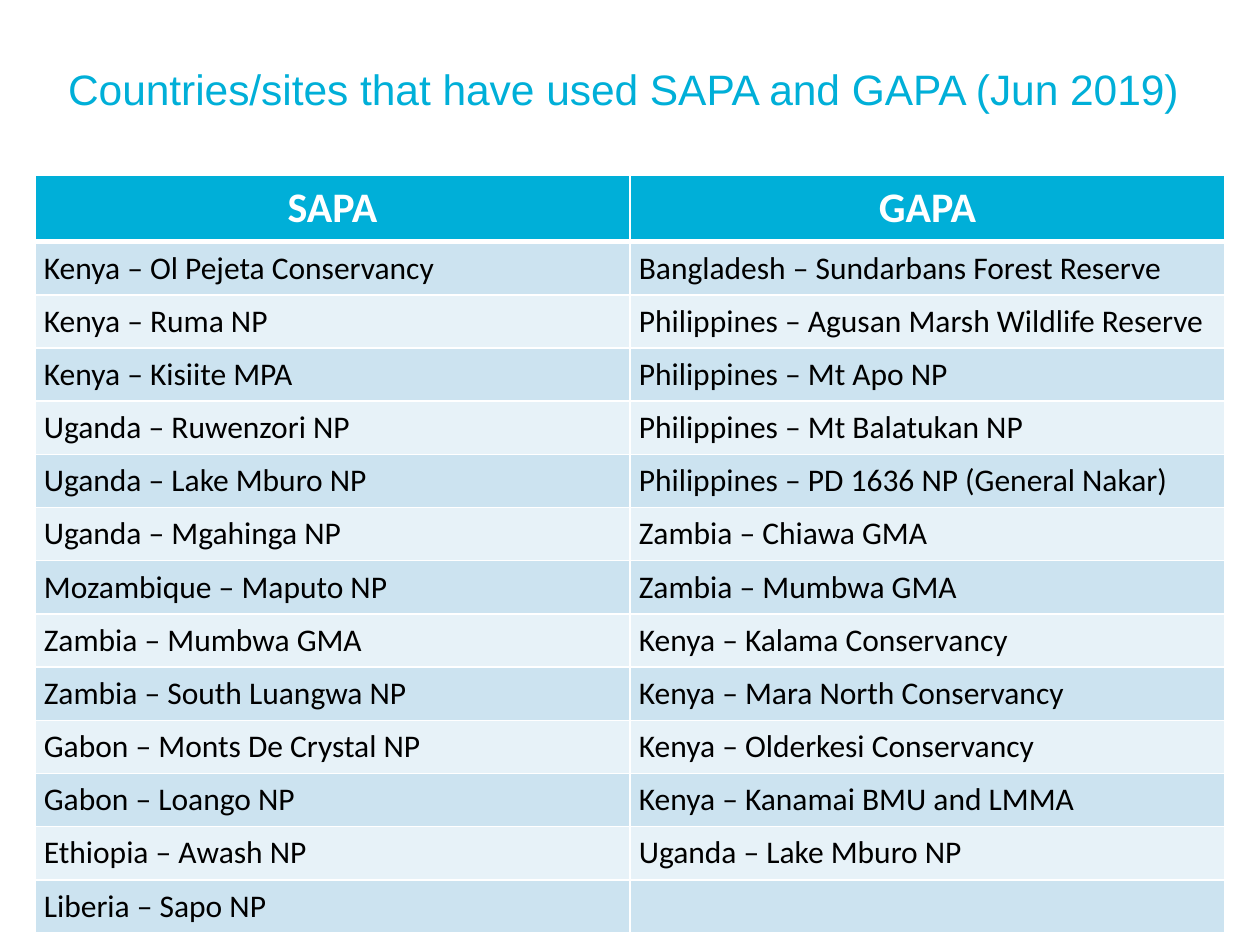
from itertools import zip_longest

from lxml import etree
from pptx import Presentation
from pptx.dml.color import RGBColor
from pptx.enum.text import MSO_ANCHOR, PP_ALIGN
from pptx.oxml.ns import qn
from pptx.util import Pt

ACCENT = "00AFD8"
WHITE = "FFFFFF"
BLACK = "000000"
BANDS = ("CCE3F0", "E7F2F8")

SAPA_SITES = [
    "Kenya – Ol Pejeta Conservancy",
    "Kenya – Ruma NP",
    "Kenya – Kisiite MPA",
    "Uganda – Ruwenzori NP",
    "Uganda – Lake Mburo NP",
    "Uganda – Mgahinga NP",
    "Mozambique – Maputo NP",
    "Zambia – Mumbwa GMA",
    "Zambia – South Luangwa NP",
    "Gabon – Monts De Crystal NP",
    "Gabon – Loango NP",
    "Ethiopia – Awash NP",
    "Liberia – Sapo NP",
]
GAPA_SITES = [
    "Bangladesh – Sundarbans Forest Reserve",
    "Philippines – Agusan Marsh Wildlife Reserve",
    "Philippines – Mt Apo NP",
    "Philippines – Mt Balatukan NP",
    "Philippines – PD 1636 NP (General Nakar)",
    "Zambia – Chiawa GMA",
    "Zambia – Mumbwa GMA",
    "Kenya – Kalama Conservancy",
    "Kenya – Mara North Conservancy",
    "Kenya – Olderkesi Conservancy",
    "Kenya – Kanamai BMU and LMMA",
    "Uganda – Lake Mburo NP",
]


def color(value):
    return RGBColor.from_string(value)


def set_font(font, name, size, value, bold=False):
    font.name = name
    font.size = Pt(size)
    font.bold = bold
    font.color.rgb = color(value)


def add_title(slide, text, left, top, width, height):
    title = slide.shapes.title
    title.left, title.top = Pt(left), Pt(top)
    title.width, title.height = Pt(width), Pt(height)
    frame = title.text_frame
    frame.text = text
    frame.vertical_anchor = MSO_ANCHOR.MIDDLE
    paragraph = frame.paragraphs[0]
    paragraph.alignment = PP_ALIGN.LEFT
    set_font(paragraph.runs[0].font, "Arial", 24.3, ACCENT)


def set_borders(cell, bottom_width):
    """Draw white cell borders; the lines must precede the cell fill."""
    properties = cell._tc.get_or_add_tcPr()
    for side, width in (("L", 1), ("R", 1), ("T", 1), ("B", bottom_width)):
        line = etree.SubElement(properties, qn(f"a:ln{side}"), w=str(Pt(width)))
        fill = etree.SubElement(line, qn("a:solidFill"))
        etree.SubElement(fill, qn("a:srgbClr"), val=WHITE)


def fill_cell(cell, text, background, is_header):
    set_borders(cell, 3 if is_header else 1)
    cell.fill.solid()
    cell.fill.fore_color.rgb = color(background)
    cell.margin_left = cell.margin_right = Pt(5.1)
    cell.margin_top = cell.margin_bottom = Pt(4.2)
    cell.text_frame.text = text
    paragraph = cell.text_frame.paragraphs[0]
    paragraph.space_after = Pt(3)
    paragraph.alignment = PP_ALIGN.CENTER if is_header else PP_ALIGN.LEFT
    for run in paragraph.runs:
        if is_header:
            set_font(run.font, "Calibri", 24, WHITE, bold=True)
        else:
            set_font(run.font, "Calibri", 18, BLACK)


def add_site_table(slide, columns, left, top, width, height):
    """Add a table with one column per entry of columns (heading: sites)."""
    rows = [tuple(columns), *zip_longest(*columns.values(), fillvalue="")]
    table = slide.shapes.add_table(
        len(rows), len(columns), Pt(left), Pt(top), Pt(width), Pt(height)
    ).table
    header_height = 33.2
    row_height = (height - header_height) / (len(rows) - 1)
    for column in table.columns:
        column.width = Pt(width / len(columns))
    for index, texts in enumerate(rows):
        is_header = index == 0
        table.rows[index].height = Pt(header_height if is_header else row_height)
        background = ACCENT if is_header else BANDS[(index - 1) % 2]
        for cell, text in zip(table.rows[index].cells, texts):
            fill_cell(cell, text, background, is_header)


def main():
    presentation = Presentation()
    presentation.slide_width, presentation.slide_height = Pt(720), Pt(540)
    slide = presentation.slides.add_slide(presentation.slide_layouts[5])
    add_title(slide, "Countries/sites that have used SAPA and GAPA (Jun 2019)",
              31.7, 31.7, 668.9, 37.4)
    add_site_table(slide, {"SAPA": SAPA_SITES, "GAPA": GAPA_SITES},
                   20, 100.4, 680, 428.4)
    presentation.save("out.pptx")


if __name__ == "__main__":
    main()
